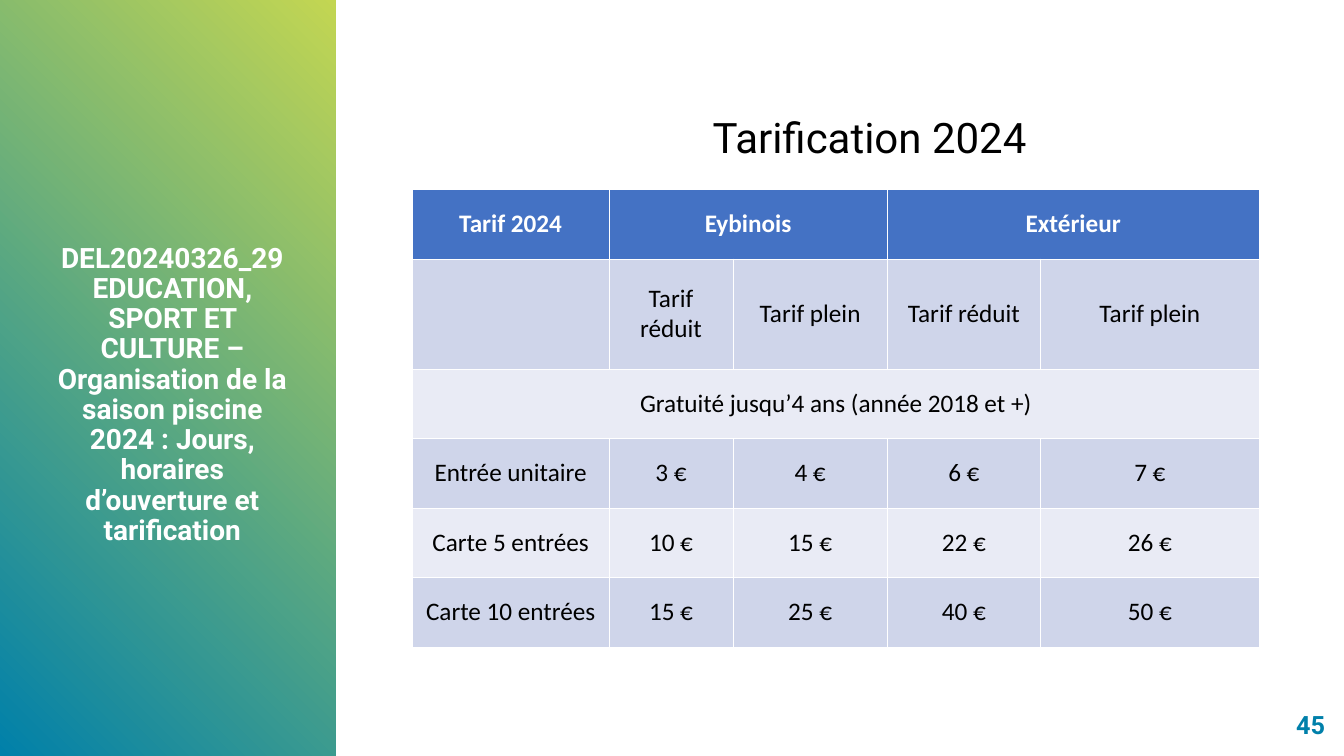
from dataclasses import dataclass

from lxml.etree import SubElement
from pptx import Presentation
from pptx.dml.color import RGBColor as Rgb
from pptx.enum.shapes import MSO_SHAPE as Shape
from pptx.enum.text import MSO_ANCHOR as Anchor, MSO_AUTO_SIZE as Fit, PP_ALIGN as Align
from pptx.oxml.ns import qn
from pptx.slide import Slide
from pptx.text.text import TextFrame as Frame
from pptx.util import Inches, Pt

HUES = {
    "blue": "0080AA", "lime": "C3D652", "white": "FFFFFF", "black": "000000",
    "head": "4472C4", "dark": "CFD5EA", "light": "E9EBF5",
}
WIDTHS = [1.95, 1.23, 1.53, 1.52, 2.17]
TOPIC = ("DEL20240326_29 EDUCATION, SPORT ET CULTURE – Organisation de la saison "
         "piscine 2024 : Jours, horaires d’ouverture et tarification")


@dataclass
class Style:
    """Look of a text."""
    size: float
    hue: str
    bold: bool = False
    font: str = "Roboto"
    align: Align = Align.CENTER
    anchor: Anchor = Anchor.MIDDLE
    space: float = 1.0


@dataclass
class Row:
    """Line of the price table, with spans as (first, last) columns."""
    texts: list[str]
    fill: str
    high: float = 0.69
    spans: tuple[tuple[int, int], ...] = ()


ROWS = [
    Row(["Tarif 2024", "Eybinois", "", "Extérieur", ""], "head", spans=((1, 2), (3, 4))),
    Row(["", "Tarif réduit", "Tarif plein", "Tarif réduit", "Tarif plein"], "dark", 1.09),
    Row(["Gratuité jusqu’4 ans (année 2018 et +)", "", "", "", ""], "light", spans=((0, 4),)),
    Row(["Entrée unitaire", "3 €", "4 €", "6 €", "7 €"], "dark"),
    Row(["Carte 5 entrées", "10 €", "15 €", "22 €", "26 €"], "light"),
    Row(["Carte 10 entrées", "15 €", "25 €", "40 €", "50 €"], "dark"),
]


def color(name: str) -> Rgb:
    """Give the colour of that name."""
    return Rgb.from_string(HUES[name])


def write(frame: Frame, text: str, style: Style) -> None:
    """Put styled text in a frame."""
    frame.text = text
    frame.word_wrap = True
    frame.vertical_anchor = style.anchor
    for para in frame.paragraphs:
        para.alignment = style.align
        para.line_spacing = style.space
        para.space_before = Pt(0)
        for run in para.runs:
            font = run.font
            font.name, font.size, font.bold = style.font, Pt(style.size), style.bold
            font.color.rgb = color(style.hue)


def place(shape, left: float, top: float, width: float, high: float) -> None:
    """Move and size a shape."""
    shape.left, shape.top = Inches(left), Inches(top)
    shape.width, shape.height = Inches(width), Inches(high)


def add_band(slide: Slide) -> None:
    """Lay the gradient band behind the rest."""
    band = slide.shapes.add_shape(Shape.RECTANGLE, 0, 0, Inches(3.33), Inches(7.5))
    band.shadow.inherit = False
    band.line.fill.background()
    band.fill.gradient()
    band.fill.gradient_angle = 45
    for stop, name, spot in zip(band.fill.gradient_stops, ("blue", "lime"), (0, 1)):
        stop.color.rgb, stop.position = color(name), spot
    slide.shapes[0].element.addprevious(band.element)


def add_edges(cell) -> None:
    """Draw thin white borders round a cell."""
    props = cell._tc.get_or_add_tcPr()
    for side in ("lnL", "lnR", "lnT", "lnB"):
        line = SubElement(props, qn(f"a:{side}"), w=str(Pt(0.54)))
        fill = SubElement(line, qn("a:solidFill"))
        SubElement(fill, qn("a:srgbClr"), val=HUES["white"])


def add_prices(slide: Slide) -> None:
    """Add the price table."""
    high = sum(row.high for row in ROWS)
    table = slide.shapes.add_table(
        len(ROWS), len(WIDTHS), Inches(4.09), Inches(1.88),
        Inches(sum(WIDTHS)), Inches(high)).table
    for col, width in zip(table.columns, WIDTHS):
        col.width = Inches(width)
    for num, row in enumerate(ROWS):
        table.rows[num].height = Inches(row.high)
        top = row.fill == "head"
        style = Style(18, "white" if top else "black", top, "Calibri")
        for col, text in enumerate(row.texts):
            cell = table.cell(num, col)
            add_edges(cell)
            cell.fill.solid()
            cell.fill.fore_color.rgb = color(row.fill)
            cell.margin_left = cell.margin_right = Inches(0.07)
            cell.margin_top = cell.margin_bottom = Inches(0.07)
            cell.vertical_anchor = Anchor.MIDDLE
            if text:
                write(cell.text_frame, text, style)
                cell.vertical_anchor = Anchor.MIDDLE
        for first, last in row.spans:
            table.cell(num, first).merge(table.cell(num, last))


def main() -> None:
    """Build and save the slide."""
    deck = Presentation()
    deck.slide_width, deck.slide_height = Inches(13.33), Inches(7.5)
    slide = deck.slides.add_slide(deck.slide_layouts[7])
    title, spare, body = slide.placeholders
    spare.element.getparent().remove(spare.element)
    add_band(slide)

    place(body, 0.37, 2.37, 2.68, 5.45)
    write(body.text_frame, TOPIC, Style(20, "white", True, anchor=Anchor.TOP, space=0.9))
    place(title, 4.59, 0.92, 8.07, 0.94)
    write(title.text_frame, "Tarification 2024", Style(30, "black", space=0.9))
    for shape in (title, body):
        shape.text_frame.auto_size = Fit.NONE

    add_prices(slide)
    page = slide.shapes.add_textbox(0, 0, 0, 0)
    place(page, 9.52, 6.98, 3.72, 0.41)
    write(page.text_frame, "45", Style(18, "blue", True, align=Align.RIGHT))
    deck.save("out.pptx")


if __name__ == "__main__":
    main()
